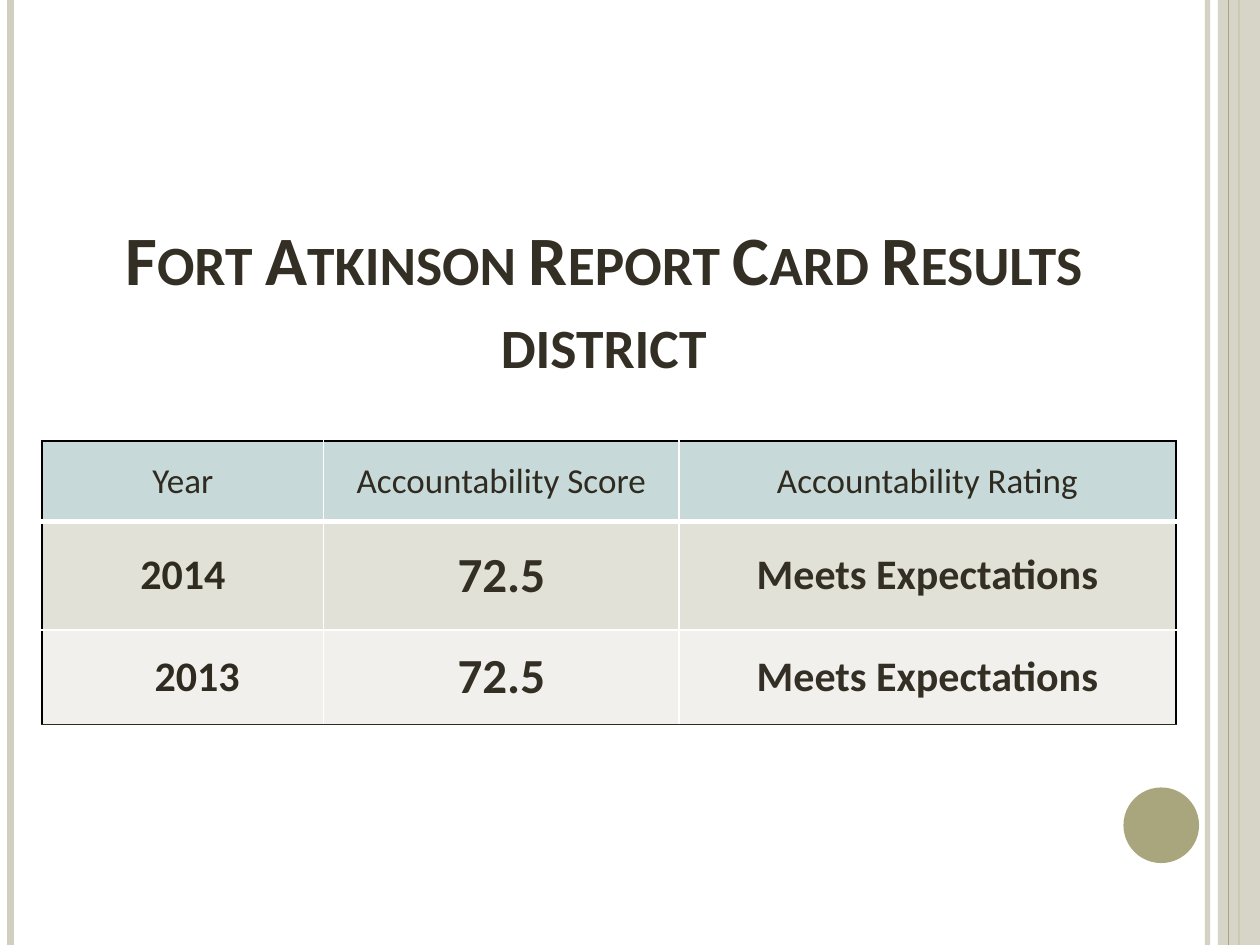
from dataclasses import dataclass

from lxml.etree import SubElement
from pptx import Presentation
from pptx.dml.color import RGBColor
from pptx.enum.shapes import MSO_CONNECTOR as Connector, MSO_SHAPE as Shape
from pptx.enum.text import MSO_ANCHOR as Anchor, PP_ALIGN as Align
from pptx.oxml import parse_xml
from pptx.oxml.ns import nsdecls, qn
from pptx.util import Pt


@dataclass(frozen=True)
class Theme:
    font: str = "Calibri"
    title: str = "342F24"
    text: str = "2F2B20"
    stripe: str = "D1CFBF"
    accent: str = "A9A57C"
    header: str = "C4D8D7"
    bands: tuple = ("E2E1D7", "F1F0EC")
    white: str = "FFFFFF"
    black: str = "000000"
    title_size: float = 39.6
    header_size: float = 20
    body_size: float = 24
    score_size: float = 28


THEME = Theme()
COLUMN_WIDTHS = (161, 203, 284)
ROW_HEIGHTS = (46, 62, 54)
RESULTS = (
    ("Year", "Accountability Score", "Accountability Rating"),
    ("2014", "72.5", "Meets Expectations"),
    ("2013", "72.5", "Meets Expectations"),
)


def set_fill(fill, color, opacity=100):
    fill.solid()
    fill.fore_color.rgb = RGBColor.from_string(color)
    if opacity < 100:
        for element in fill._xPr.iter(qn("a:srgbClr")):
            SubElement(element, qn("a:alpha"), val=str(opacity * 1000))


def format_run(run, color, **formats):
    for name, value in {"name": THEME.font, **formats}.items():
        setattr(run.font, name, value)
    run.font.color.rgb = RGBColor.from_string(color)


def add_stripe(slide, x, top, height, color, width, opacity=100):
    line = slide.shapes.add_connector(
        Connector.STRAIGHT, Pt(x), Pt(top), Pt(x), Pt(top + height))
    line.line.width = Pt(width)
    set_fill(line.line.fill, color, opacity)
    SubElement(line._element.spPr, qn("a:effectLst"))


def add_block(slide, kind, left, top, width, height, color, opacity=100):
    shape = slide.shapes.add_shape(kind, Pt(left), Pt(top), Pt(width), Pt(height))
    shape.shadow.inherit = False
    shape.line.fill.background()
    set_fill(shape.fill, color, opacity)


def add_frame(slide, left, top, width, height):
    right = left + width
    add_stripe(slide, right - 30, top, height, THEME.stripe, 3, 93)
    add_stripe(slide, left + 6, top, height, THEME.stripe, 4.5)
    add_stripe(slide, right - 12, top, height, THEME.accent, 1.5)
    add_block(slide, Shape.RECTANGLE, right - 24, top, 24, height, THEME.stripe, 87)
    add_stripe(slide, right - 18, top, height, THEME.accent, 0.75)
    add_block(slide, Shape.OVAL, right - 78, top + 450, 43.2, 43.2, THEME.accent)


def add_title(slide, left, top, width, height):
    box = slide.shapes.add_textbox(Pt(left), Pt(top), Pt(width), Pt(height))
    frame = box.text_frame
    frame.word_wrap = True
    frame.vertical_anchor = Anchor.BOTTOM
    paragraph = frame.paragraphs[0]
    paragraph.text = "Fort Atkinson Report Card Results\vdistrict"
    paragraph.alignment = Align.CENTER
    for run in paragraph.runs:
        format_run(run, THEME.title, size=Pt(THEME.title_size), bold=True)
        run.font._element.set("cap", "small")


def set_borders(cell, row, column):
    last_row, last_column = len(RESULTS) - 1, len(COLUMN_WIDTHS) - 1
    borders = {
        "lnL": (THEME.white if column else THEME.black, 1),
        "lnR": (THEME.black if column == last_column else THEME.white, 1),
        "lnT": (THEME.white if row else THEME.black, 1),
        "lnB": (THEME.text if row == last_row else THEME.white, 1 if row else 3),
    }
    properties = cell._tc.get_or_add_tcPr()
    for index, (tag, (color, width)) in enumerate(borders.items()):
        properties.insert(index, parse_xml(
            f'<a:{tag} {nsdecls("a")} w="{Pt(width)}"><a:solidFill>'
            f'<a:srgbClr val="{color}"/></a:solidFill></a:{tag}>'))


def fill_cell(cell, text, row, column):
    if row == 0:
        set_fill(cell.fill, THEME.header, 94)
        size = THEME.header_size
    else:
        set_fill(cell.fill, THEME.bands[row - 1])
        size = THEME.score_size if column == 1 else THEME.body_size
    set_borders(cell, row, column)
    cell.vertical_anchor = Anchor.MIDDLE
    paragraph = cell.text_frame.paragraphs[0]
    paragraph.alignment = Align.CENTER
    run = paragraph.add_run()
    run.text = text
    color = THEME.title if row and column else THEME.text
    format_run(run, color, size=Pt(size), bold=row > 0)


def add_results(slide, left, top, width, height):
    table = slide.shapes.add_table(
        len(RESULTS), len(COLUMN_WIDTHS),
        Pt(left), Pt(top), Pt(width), Pt(height)).table
    for column, points in zip(table.columns, COLUMN_WIDTHS):
        column.width = Pt(points)
    for row, points in zip(table.rows, ROW_HEIGHTS):
        row.height = Pt(points)
    for row, values in enumerate(RESULTS):
        for column, text in enumerate(values):
            fill_cell(table.cell(row, column), text, row, column)
    table.cell(2, 0).margin_left = Pt(23.5)


def main():
    presentation = Presentation()
    presentation.slide_width, presentation.slide_height = Pt(720), Pt(540)
    slide = presentation.slides.add_slide(presentation.slide_layouts[6])
    set_fill(slide.background.fill, THEME.white)
    add_frame(slide, 0, 0, 720, 540)
    add_title(slide, 30, 132, 630, 90)
    add_results(slide, 24, 252, sum(COLUMN_WIDTHS), sum(ROW_HEIGHTS))
    presentation.save("out.pptx")


if __name__ == "__main__":
    main()
